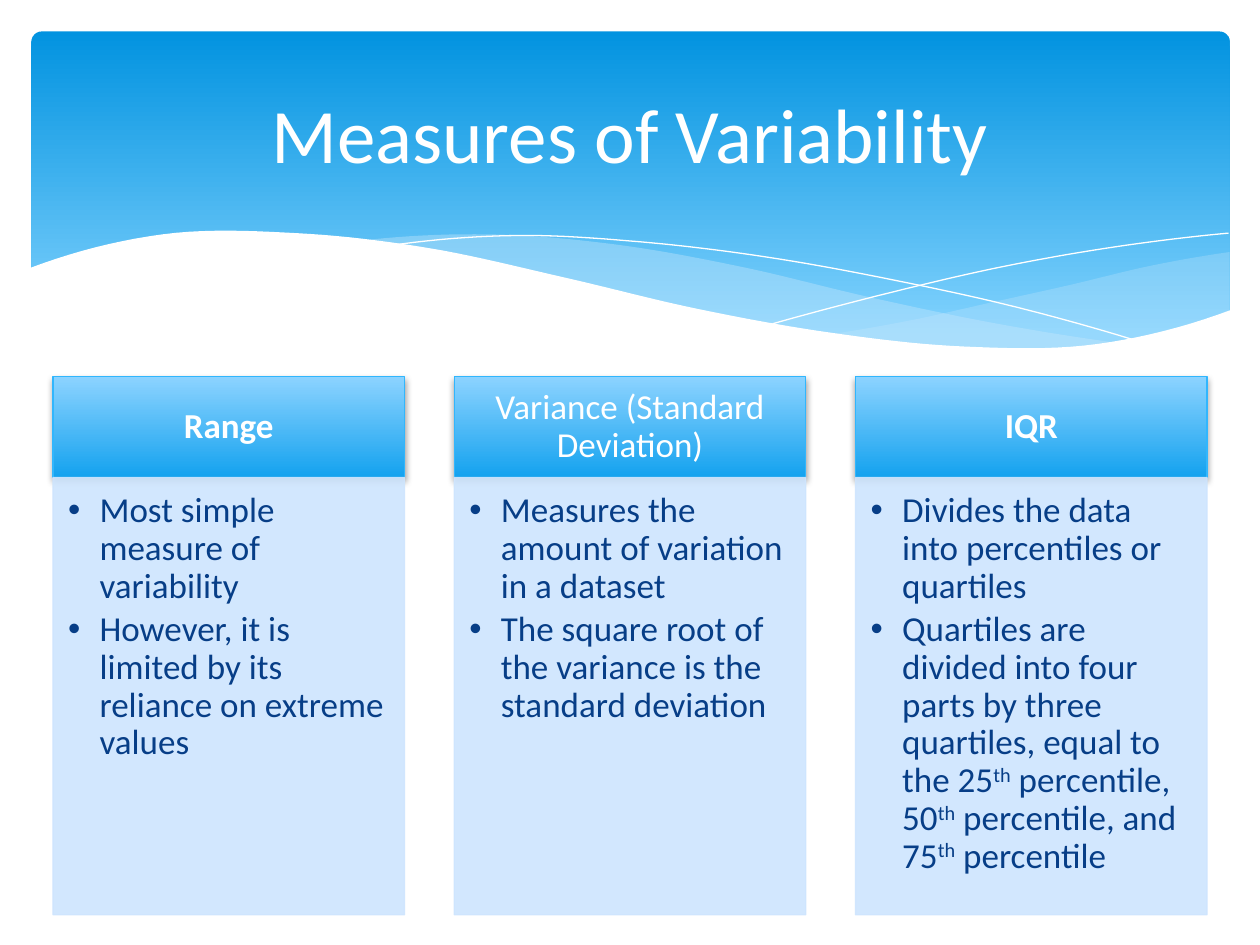
"""Build the slide on measures of variability: a wave banner and three columns."""
from lxml.etree import SubElement
from pptx import Presentation
from pptx.dml.color import RGBColor
from pptx.enum.shapes import MSO_SHAPE
from pptx.enum.text import MSO_ANCHOR, PP_ALIGN
from pptx.oxml import parse_xml
from pptx.oxml.ns import nsdecls, qn
from pptx.util import Inches, Pt


def paint(fill, *colours, opacity=100, end=1):
    """Give a fill one colour, or a downward gradient of two."""
    if len(colours) == 2:
        fill.gradient()
        fill.gradient_angle = 270
        for stop, colour, position in zip(fill.gradient_stops, colours, (0, end)):
            stop.color.rgb = RGBColor.from_string(colour)
            stop.position = position
        return
    fill.solid()
    fill.fore_color.rgb = RGBColor.from_string(colours[0])
    if opacity < 100:
        colour_element = fill._xPr.find(qn("a:solidFill"))[0]
        SubElement(colour_element, qn("a:alpha"), val=str(opacity * 1000))


def write(paragraph, text, size, colour, bold=False):
    """Write text in which every second part between bars is superscript."""
    for index, part in enumerate(text.split("|")):
        run = paragraph.add_run()
        run.text = part
        run.font.name = "Calibri"
        run.font.size = Pt(size)
        run.font.bold = bold
        run.font.color.rgb = RGBColor.from_string(colour)
        if index % 2:
            run._r.get_or_add_rPr().set("baseline", "30000")


presentation = Presentation()
presentation.slide_width = Inches(10)
presentation.slide_height = Inches(7.5)
slide = presentation.slides.add_slide(presentation.slide_layouts[5])
shapes = slide.shapes

banner = shapes.add_shape(
    MSO_SHAPE.ROUNDED_RECTANGLE, Inches(0.25), Inches(0.25), Inches(9.51), Inches(2.7))
banner.adjustments[0] = 0.03
banner.shadow.inherit = False
banner.line.fill.background()
paint(banner.fill, "0293E0", "83D3FE", end=0.9)

STEPS_PER_SPAN = 10
right_wave = [
    (9.76, 6.61, [2, 2.11, 2.26, 2.4, 2.54, 2.65]),
    (6.61, 9.76, [2.65, 2.73, 2.77, 2.77, 2.67, 2.47])]
middle_wave = [
    (8.93, 2.86, [2.73, 2.57, 2.36, 2.12, 1.94, 1.86, 1.91]),
    (2.86, 8.93, [1.91, 2.08, 2.31, 2.53, 2.7, 2.78, 2.73])]
falling_line = [(3.09, 9.07, [1.95, 1.87, 1.92, 2.04, 2.22, 2.44, 2.72])]
rising_line = [(6.13, 9.75, [2.57, 2.33, 2.12, 1.96, 1.85])]
white_wave = [
    (9.77, 0.23, [2.46, 2.73, 2.75, 2.64, 2.45, 2.2, 1.97, 1.85, 1.86, 2.13]),
    (0.23, 9.77, [3.29, 3.29, 3.29])]

for edges, colour, opacity in (
        (right_wave, "C6E7FC", 29), (middle_wave, "C6E7FC", 40),
        (falling_line, None, 100), (rising_line, None, 100), (white_wave, "FFFFFF", 100)):
    points = []
    for start, end, heights in edges:
        spans = len(heights) - 1
        before = 3 * heights[0] - 3 * heights[1] + heights[2]
        after = 3 * heights[-1] - 3 * heights[-2] + heights[-3]
        knots = [before, *heights, after]
        for step in range(spans * STEPS_PER_SPAN + 1):
            span = min(step // STEPS_PER_SPAN, spans - 1)
            t = step / STEPS_PER_SPAN - span
            a, b, c, d = knots[span:span + 4]
            y = b + t / 2 * (c - a + t * (
                2 * a - 5 * b + 4 * c - d + t * (3 * b - 3 * c + d - a)))
            x = start + (end - start) * step / (spans * STEPS_PER_SPAN)
            points.append((Inches(x), Inches(y)))

    builder = shapes.build_freeform(*points[0])
    builder.add_line_segments(points[1:], close=colour is not None)
    wave = builder.convert_to_shape()
    wave.shadow.inherit = False
    if colour:
        paint(wave.fill, colour, opacity=opacity)
        wave.line.fill.background()
    else:
        wave.fill.background()
        paint(wave.line.fill, "FFFFFF")
        wave.line.width = Pt(0)

title = shapes.title
title.left, title.top, title.width, title.height = (
    Inches(0.5), Inches(0.37), Inches(9), Inches(1.37))
title.text_frame.vertical_anchor = MSO_ANCHOR.MIDDLE
title.text_frame.paragraphs[0].alignment = PP_ALIGN.CENTER
write(title.text_frame.paragraphs[0], "Measures of Variability", 44, "FFFFFF")
shapes._spTree.append(title._element)

columns = [
    ("Range", True, [
        "Most simple measure of variability",
        "However, it is limited by its reliance on extreme values"]),
    ("Variance (Standard Deviation)", False, [
        "Measures the amount of variation in a dataset",
        "The square root of the variance is the standard deviation"]),
    ("IQR", True, [
        "Divides the data into percentiles or quartiles",
        "Quartiles are divided into four parts by three quartiles, equal to the "
        "25|th| percentile, 50|th| percentile, and 75|th| percentile"])]
first_left, last_left = Inches(0.42), Inches(6.79)
column_width = Inches(2.79)
header_top, header_height = Inches(2.99), Inches(0.8)
column_pitch = (last_left - first_left) // (len(columns) - 1)

for index, (heading, bold, statements) in enumerate(columns):
    left = first_left + index * column_pitch
    header = shapes.add_shape(
        MSO_SHAPE.RECTANGLE, left, header_top, column_width, header_height)
    body = shapes.add_shape(
        MSO_SHAPE.RECTANGLE, left, header_top + header_height, column_width, Inches(3.47))

    paint(header.fill, "8CD3FF", "14A2EF")
    paint(header.line.fill, "31B6FD")
    header._element.spPr.append(parse_xml(
        f'<a:effectLst {nsdecls("a")}><a:outerShdw blurRad="50800" dist="25400" '
        'dir="5400000" rotWithShape="0"><a:srgbClr val="000000"><a:alpha val="38000"/>'
        '</a:srgbClr></a:outerShdw></a:effectLst>'))
    paint(body.fill, "CEE5FE", opacity=90)
    paint(body.line.fill, "CEE5FE", opacity=90)
    body.shadow.inherit = False

    for shape, anchor, margins in (
            (header, MSO_ANCHOR.MIDDLE, (0.16, 0.09, 0.16, 0.09)),
            (body, MSO_ANCHOR.TOP, (0.12, 0.12, 0.16, 0.17))):
        shape.line.width = Pt(0.75)
        frame = shape.text_frame
        frame.word_wrap = True
        frame.vertical_anchor = anchor
        frame.margin_left, frame.margin_top, frame.margin_right, frame.margin_bottom = (
            Inches(margin) for margin in margins)

    paragraph = header.text_frame.paragraphs[0]
    paragraph.alignment = PP_ALIGN.CENTER
    paragraph.line_spacing = 0.9
    write(paragraph, heading, 20, "FFFFFF", bold)

    for number, statement in enumerate(statements):
        frame = body.text_frame
        paragraph = frame.add_paragraph() if number else frame.paragraphs[0]
        paragraph.alignment = PP_ALIGN.LEFT
        paragraph.level = 1
        paragraph.line_spacing = 0.9
        paragraph.space_after = Pt(3)
        properties = paragraph._p.get_or_add_pPr()
        properties.set("marL", str(Inches(0.25)))
        properties.set("indent", str(Inches(-0.25)))
        SubElement(properties, qn("a:buFont"), typeface="Arial")
        SubElement(properties, qn("a:buChar"), char="•")
        write(paragraph, statement, 20, "073E87")

presentation.save("out.pptx")
